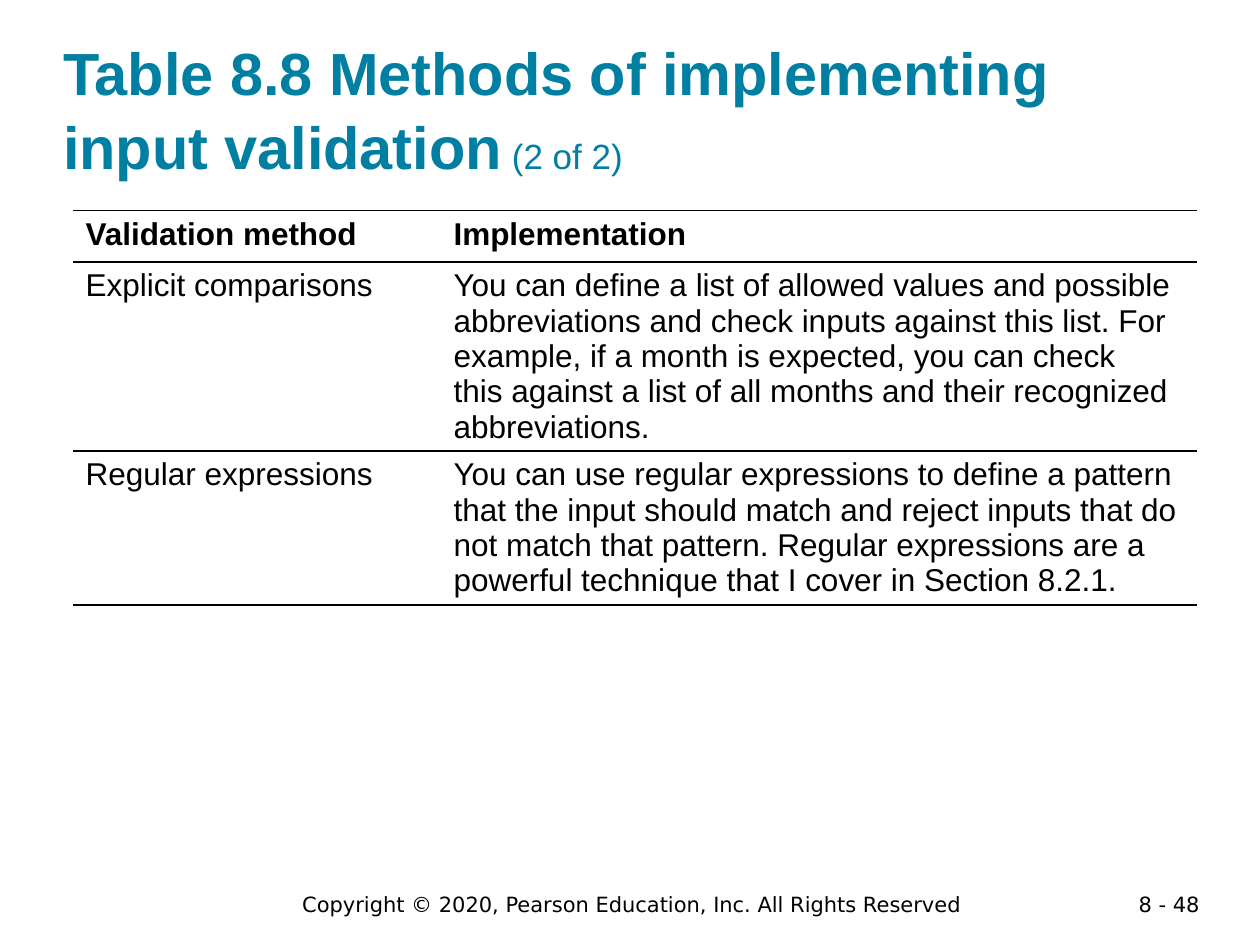
import pptx
import pptx.util
import pptx.dml.color
import pptx.enum.text
import pptx.oxml
import pptx.oxml.ns

Inches = pptx.util.Inches
Pt = pptx.util.Pt
ALIGN = pptx.enum.text.PP_ALIGN
COLORS = {"title": "007FA3", "text": "000000", "page": "FFFFFF"}
BODY = {"name": "Arial", "size": Pt(18), "bold": False}
HEAD = {**BODY, "bold": True}
FOOT = {"name": "DejaVu Sans", "size": Pt(12), "bold": False}

ROWS = [
    ("Validation method", "Implementation"),
    ("Explicit comparisons",
     "You can define a list of allowed values and possible\n"
     "abbreviations and check inputs against this list. For\n"
     "example, if a month is expected, you can check\n"
     "this against a list of all months and their recognized\n"
     "abbreviations."),
    ("Regular expressions",
     "You can use regular expressions to define a pattern that the input "
     "should match and reject inputs that do not match that pattern. Regular "
     "expressions are a powerful technique that I cover in Section 8.2.1."),
]
WIDTHS = [2.92, 6]
HEIGHTS = [0.41, 1.5, 1.22]


def style(font, look, color="text"):
    for key, value in look.items():
        setattr(font, key, value)
    font.color.rgb = pptx.dml.color.RGBColor.from_string(COLORS[color])


def add_title(slide):
    title = slide.shapes.title
    title.left, title.top, title.width, title.height = map(
        Inches, (0.5, 0.24, 9, 1.2))
    frame = title.text_frame
    settings = {"margin_left": 0, "margin_top": 0, "margin_right": 0,
                "margin_bottom": 0, "word_wrap": True,
                "vertical_anchor": pptx.enum.text.MSO_ANCHOR.BOTTOM}
    for key, value in settings.items():
        setattr(frame, key, value)
    para = frame.paragraphs[0]
    para.alignment = ALIGN.LEFT
    para.line_spacing = 1.04
    for text, size, bold in (
            ("Table 8.8 Methods of implementing input validation", 34, True),
            (" ", 20, True), ("(2 of 2)", 20, False)):
        run = para.add_run()
        run.text = text
        style(run.font, {"name": "Arial", "size": Pt(size), "bold": bold},
              "title")


def add_rules(cell):
    """Draw 1 pt lines above and below the cell, none at its sides."""
    props = cell._tc.get_or_add_tcPr()
    solid = f'<a:solidFill><a:srgbClr val="{COLORS["text"]}"/></a:solidFill>'
    for side in "LRTB":
        fill = solid if side in "TB" else "<a:noFill/>"
        props.append(pptx.oxml.parse_xml(
            f'<a:ln{side} {pptx.oxml.ns.nsdecls("a")} w="{Pt(1)}">'
            f'{fill}</a:ln{side}>'))


def add_grid(slide):
    table = slide.shapes.add_table(
        len(ROWS), len(WIDTHS), Inches(0.58), Inches(1.67),
        Inches(sum(WIDTHS)), Inches(sum(HEIGHTS))).table
    table.horz_banding = False
    for col, width in zip(table.columns, WIDTHS):
        col.width = Inches(width)
    for r, (texts, height) in enumerate(zip(ROWS, HEIGHTS)):
        table.rows[r].height = Inches(height)
        for c, text in enumerate(texts):
            cell = table.cell(r, c)
            cell.text = text
            for para in cell.text_frame.paragraphs:
                style(para.runs[0].font, BODY if r else HEAD)
            add_rules(cell)
            cell.fill.background()


def add_note(slide, text, area, align):
    frame = slide.shapes.add_textbox(*map(Inches, area)).text_frame
    frame.word_wrap = True
    para = frame.paragraphs[0]
    para.alignment = align
    run = para.add_run()
    run.text = text
    style(run.font, FOOT)


def main():
    deck = pptx.Presentation()
    deck.slide_width, deck.slide_height = Inches(10), Inches(7.5)
    slide = deck.slides.add_slide(deck.slide_layouts[5])
    fill = slide.background.fill
    fill.solid()
    fill.fore_color.rgb = pptx.dml.color.RGBColor.from_string(COLORS["page"])
    add_title(slide)
    add_grid(slide)
    add_note(slide,
             "Copyright © 2020, Pearson Education, Inc. All Rights Reserved",
             (1.64, 7.03, 6.75, 0.3), ALIGN.CENTER)
    add_note(slide, "8 - 48", (8.62, 7.03, 1, 0.22), ALIGN.RIGHT)
    deck.save("out.pptx")


if __name__ == "__main__":
    main()
